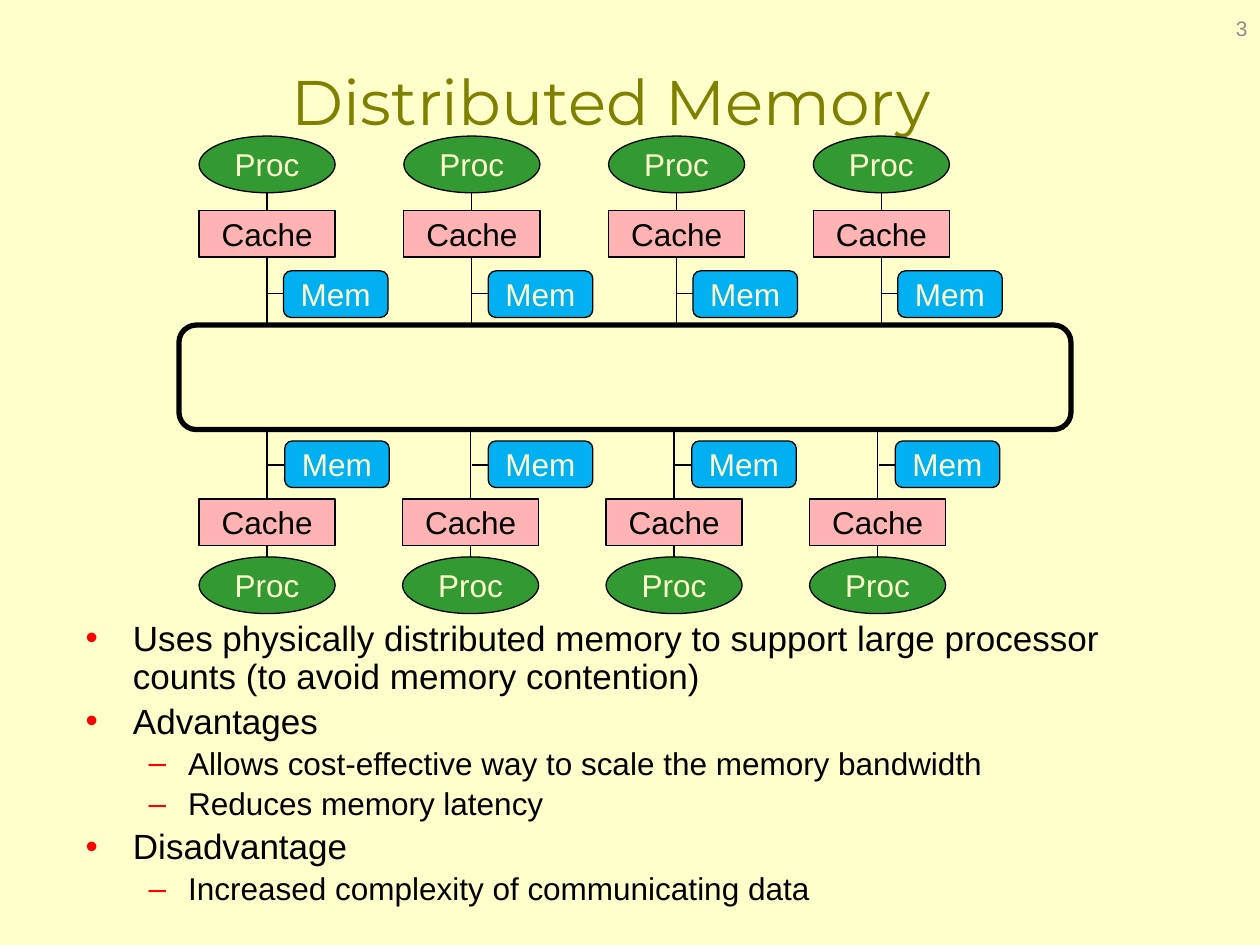
from lxml.etree import SubElement
from pptx import Presentation
from pptx.dml.color import RGBColor
from pptx.enum.shapes import MSO_CONNECTOR, MSO_SHAPE
from pptx.enum.text import MSO_ANCHOR, MSO_AUTO_SIZE, PP_ALIGN
from pptx.oxml.ns import qn
from pptx.util import Inches, Pt

COLORS = {
    "background": "FFFFCC", "title": "808000", "number": "8C8C8C",
    "text": "000000", "line": "000000", "bullet": "FF0000",
    "proc": "339933", "cache": "FFB3B3", "mem": "00B0F0",
}
NODES = {
    "Proc": (MSO_SHAPE.OVAL, "proc", "background", 1.08, 0.45),
    "Cache": (MSO_SHAPE.RECTANGLE, "cache", "text", 1.08, 0.37),
    "Mem": (MSO_SHAPE.ROUNDED_RECTANGLE, "mem", "background", 0.83, 0.37),
}
BUS = (1.42, 2.58, 7.08, 0.83)
ROWS = [
    {"pitch": 1.625, "tops": {"Proc": 1.08, "Cache": 1.67, "Mem": 2.15},
     "mem_offset": 0.67, "branch_offset": 0.54, "branch_y": 2.33,
     "stems": [(1.53, 1.67), (2.04, 2.58)]},
    {"pitch": 1.615, "tops": {"Proc": 4.42, "Cache": 3.96, "Mem": 3.5},
     "mem_offset": 0.68, "branch_offset": 0.55, "branch_y": 3.69,
     "stems": [(4.42, 4.33), (3.42, 3.96)]},
]
FIRST_LEFT = 1.58
STEM_OFFSET = 0.54
BULLETS = [
    (0, "Uses physically distributed memory to support large processor "
        "counts (to avoid memory contention)"),
    (0, "Advantages"),
    (1, "Allows cost-effective way to scale the memory bandwidth"),
    (1, "Reduces memory latency"),
    (0, "Disadvantage"),
    (1, "Increased complexity of communicating data"),
]


def rgb(name):
    """Return the named colour."""
    return RGBColor.from_string(COLORS[name])


def set_attrs(obj, values):
    """Set attributes of an object from a dict."""
    for name, value in values.items():
        setattr(obj, name, value)


def place(sp, left, top, width, height):
    """Position a shape, with lengths in inches."""
    set_attrs(sp, {"left": Inches(left), "top": Inches(top),
                   "width": Inches(width), "height": Inches(height)})


def write(p, text, size, color, font="Arial", **layout):
    """Write one formatted run in a paragraph."""
    set_attrs(p, layout)
    r = p.add_run()
    r.text = text
    set_attrs(r.font, {"size": Pt(size), "name": font})
    r.font.color.rgb = rgb(color)


def add_title(s):
    """Fill the title placeholder."""
    sp = s.shapes.title
    place(sp, 0.58, 0.17, 8.67, 1.25)
    tf = sp.text_frame
    set_attrs(tf, {"auto_size": MSO_AUTO_SIZE.NONE,
                   "vertical_anchor": MSO_ANCHOR.MIDDLE})
    write(tf.paragraphs[0], "Distributed Memory ", 36, "title", "Montserrat",
          alignment=PP_ALIGN.CENTER)


def add_bullets(s):
    """Fill the body placeholder with the two-level list."""
    sp = s.placeholders[1]
    place(sp, 0.58, 4.88, 8.67, 2.62)
    tf = sp.text_frame
    tf.auto_size = MSO_AUTO_SIZE.NONE
    for i, (level, text) in enumerate(BULLETS):
        p = tf.add_paragraph() if i else tf.paragraphs[0]
        write(p, text, 20 - 2 * level, "text", level=level, line_spacing=0.9)
        color = SubElement(p._p.get_or_add_pPr(), qn("a:buClr"))
        SubElement(color, qn("a:srgbClr"), val=COLORS["bullet"])


def add_number(s):
    """Add the slide number at the top right."""
    sp = s.shapes.add_textbox(Inches(7.67), Inches(0.02), Inches(2.33), Inches(0.4))
    tf = sp.text_frame
    set_attrs(tf, {"word_wrap": True, "vertical_anchor": MSO_ANCHOR.MIDDLE})
    write(tf.paragraphs[0], "3", 12, "number", alignment=PP_ALIGN.RIGHT)


def add_box(s, kind, box, line_width, fill=None):
    """Add an outlined shape, filled when a colour is given."""
    sp = s.shapes.add_shape(kind, *map(Inches, box))
    sp.shadow.inherit = False
    if fill:
        sp.fill.solid()
        sp.fill.fore_color.rgb = rgb(fill)
    else:
        sp.fill.background()
    sp.line.color.rgb = rgb("line")
    sp.line.width = Pt(line_width)
    return sp


def add_node(s, label, left, top):
    """Add a labelled processor, cache or memory node."""
    kind, fill, color, width, height = NODES[label]
    tf = add_box(s, kind, (left, top, width, height), 0.75, fill).text_frame
    set_attrs(tf, {"word_wrap": False, "vertical_anchor": MSO_ANCHOR.MIDDLE})
    write(tf.paragraphs[0], label, 18, color, alignment=PP_ALIGN.CENTER)


def add_line(s, x1, y1, x2, y2):
    """Add a thin straight connector."""
    sp = s.shapes.add_connector(MSO_CONNECTOR.STRAIGHT, *map(Inches, (x1, y1, x2, y2)))
    sp.line.color.rgb = rgb("line")
    sp.line.width = Pt(0.75)
    SubElement(sp._element.spPr, qn("a:effectLst"))


def add_unit(s, row, left):
    """Add one processor with its cache, memory and wiring."""
    tops = row["tops"]
    mem_left = left + row["mem_offset"]
    stem_x = left + STEM_OFFSET
    add_node(s, "Proc", left, tops["Proc"])
    add_node(s, "Cache", left, tops["Cache"])
    for start, end in row["stems"]:
        add_line(s, stem_x, start, stem_x, end)
    add_line(s, left + row["branch_offset"], row["branch_y"], mem_left, row["branch_y"])
    add_node(s, "Mem", mem_left, tops["Mem"])


def main():
    """Build and save the slide."""
    prs = Presentation()
    set_attrs(prs, {"slide_width": Inches(10), "slide_height": Inches(7.5)})
    s = prs.slides.add_slide(prs.slide_layouts[1])
    s.background.fill.solid()
    s.background.fill.fore_color.rgb = rgb("background")
    add_title(s)
    add_bullets(s)
    add_number(s)
    add_box(s, MSO_SHAPE.ROUNDED_RECTANGLE, BUS, 3)
    for row in ROWS:
        for i in range(4):
            add_unit(s, row, FIRST_LEFT + i * row["pitch"])
    prs.save("out.pptx")


if __name__ == "__main__":
    main()
